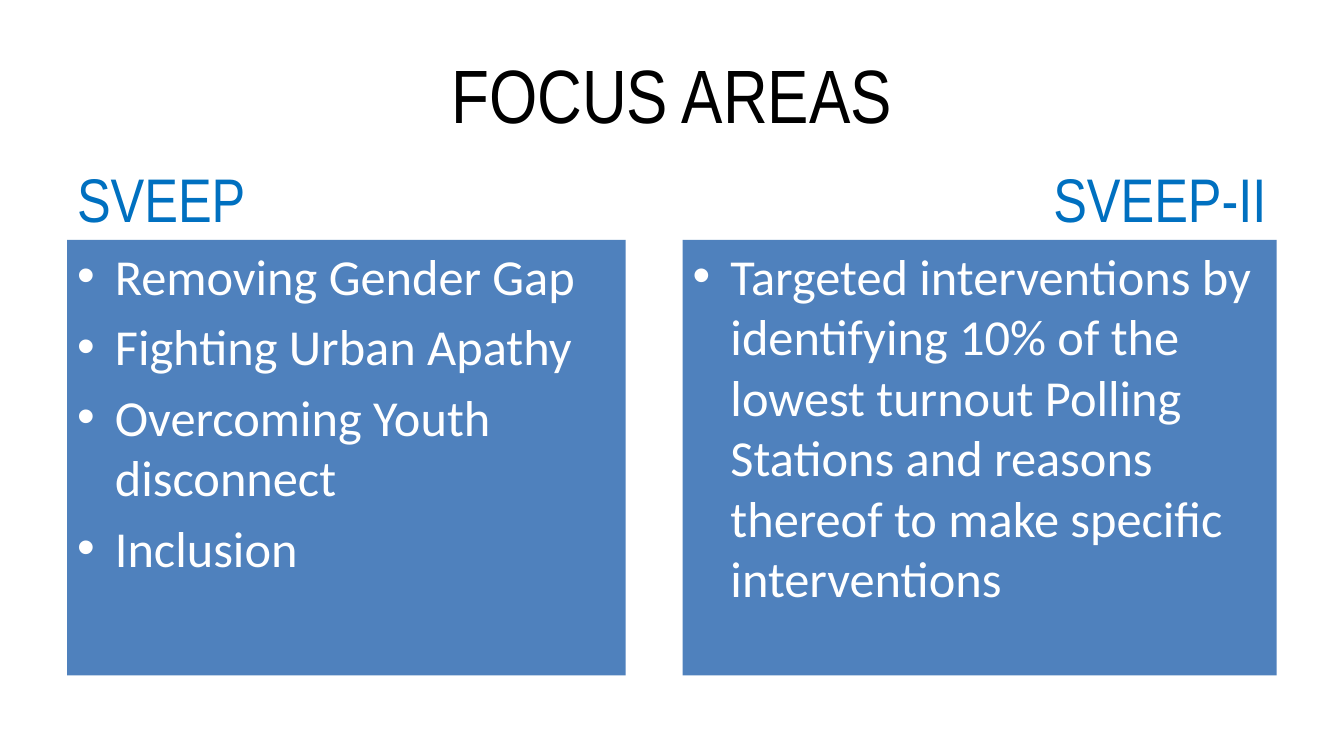
from dataclasses import dataclass

from lxml import etree
from pptx import Presentation
from pptx.dml.color import RGBColor
from pptx.enum.shapes import MSO_SHAPE
from pptx.enum.text import MSO_ANCHOR, PP_ALIGN
from pptx.oxml.ns import qn
from pptx.slide import Slide
from pptx.util import Pt

RECTANGLE = MSO_SHAPE.RECTANGLE
TOP, MIDDLE, BOTTOM = MSO_ANCHOR.TOP, MSO_ANCHOR.MIDDLE, MSO_ANCHOR.BOTTOM
LEFT, CENTER, RIGHT = PP_ALIGN.LEFT, PP_ALIGN.CENTER, PP_ALIGN.RIGHT

BLACK = RGBColor(0x00, 0x00, 0x00)
WHITE = RGBColor(0xFF, 0xFF, 0xFF)
HEADING_BLUE = RGBColor(0x00, 0x70, 0xC0)
PANEL_BLUE = RGBColor(0x4F, 0x81, 0xBD)

HEADING_FONT = "Arial Narrow"
BODY_FONT = "Calibri"

MARGIN = 48
HEADING_TOP, HEADING_WIDTH, HEADING_HEIGHT = 121, 424.3, 50.4
PANEL_TOP = HEADING_TOP + HEADING_HEIGHT
PANEL_HEIGHT = 311
BULLET_INDENT = 27
SPACING_RATIO = 0.2


@dataclass(frozen=True)
class Box:
    left: float
    top: float
    width: float
    height: float

    def lengths(self) -> tuple[Pt, Pt, Pt, Pt]:
        return Pt(self.left), Pt(self.top), Pt(self.width), Pt(self.height)


@dataclass(frozen=True)
class TextStyle:
    font: str
    size: float
    color: RGBColor
    anchor: MSO_ANCHOR
    space_before: float = 0
    bulleted: bool = False


@dataclass(frozen=True)
class FocusColumn:
    left: float
    panel_width: float
    heading: str
    alignment: PP_ALIGN
    points: tuple[str, ...]


TITLE_STYLE = TextStyle(HEADING_FONT, 54, BLACK, MIDDLE)
HEADING_STYLE = TextStyle(HEADING_FONT, 44, HEADING_BLUE, BOTTOM, 44 * SPACING_RATIO)
POINT_STYLE = TextStyle(BODY_FONT, 36, WHITE, TOP, 36 * SPACING_RATIO, bulleted=True)

COLUMNS = (
    FocusColumn(MARGIN, 399, "SVEEP", LEFT, (
        "Removing Gender Gap",
        "Fighting Urban Apathy",
        "Overcoming Youth disconnect",
        "Inclusion",
    )),
    FocusColumn(487.7, HEADING_WIDTH, "SVEEP-II", RIGHT, (
        "Targeted interventions by identifying 10% of the lowest turnout "
        "Polling Stations and reasons thereof to make specific interventions",
    )),
)


def add_bullet(paragraph) -> None:
    properties = paragraph._p.get_or_add_pPr()
    properties.set("marL", str(Pt(BULLET_INDENT)))
    properties.set("indent", str(-Pt(BULLET_INDENT)))
    etree.SubElement(properties, qn("a:buFont")).set("typeface", "Arial")
    etree.SubElement(properties, qn("a:buChar")).set("char", "•")


def write_text(shape, lines: tuple[str, ...], style: TextStyle, alignment: PP_ALIGN) -> None:
    frame = shape.text_frame
    frame.word_wrap = True
    frame.vertical_anchor = style.anchor
    frame.text = "\n".join(lines)
    for paragraph in frame.paragraphs:
        paragraph.alignment = alignment
        paragraph.space_before = Pt(style.space_before)
        paragraph.font.name = style.font
        paragraph.font.size = Pt(style.size)
        paragraph.font.color.rgb = style.color
        if style.bulleted:
            add_bullet(paragraph)


def add_label(slide: Slide, box: Box, text: str, style: TextStyle, alignment: PP_ALIGN) -> None:
    write_text(slide.shapes.add_textbox(*box.lengths()), (text,), style, alignment)


def add_panel(slide: Slide, box: Box, points: tuple[str, ...]) -> None:
    panel = slide.shapes.add_shape(RECTANGLE, *box.lengths())
    panel.shadow.inherit = False
    panel.fill.solid()
    panel.fill.fore_color.rgb = PANEL_BLUE
    panel.line.fill.background()
    write_text(panel, points, POINT_STYLE, LEFT)


def add_column(slide: Slide, column: FocusColumn) -> None:
    heading_box = Box(column.left, HEADING_TOP, HEADING_WIDTH, HEADING_HEIGHT)
    panel_box = Box(column.left, PANEL_TOP, column.panel_width, PANEL_HEIGHT)
    add_label(slide, heading_box, column.heading, HEADING_STYLE, column.alignment)
    add_panel(slide, panel_box, column.points)


def main() -> None:
    presentation = Presentation()
    presentation.slide_width = Pt(960)
    presentation.slide_height = Pt(540)
    slide = presentation.slides.add_slide(presentation.slide_layouts[6])
    add_label(slide, Box(MARGIN, 21.6, 864, 90), "FOCUS AREAS", TITLE_STYLE, CENTER)
    for column in COLUMNS:
        add_column(slide, column)
    presentation.save("out.pptx")


if __name__ == "__main__":
    main()
